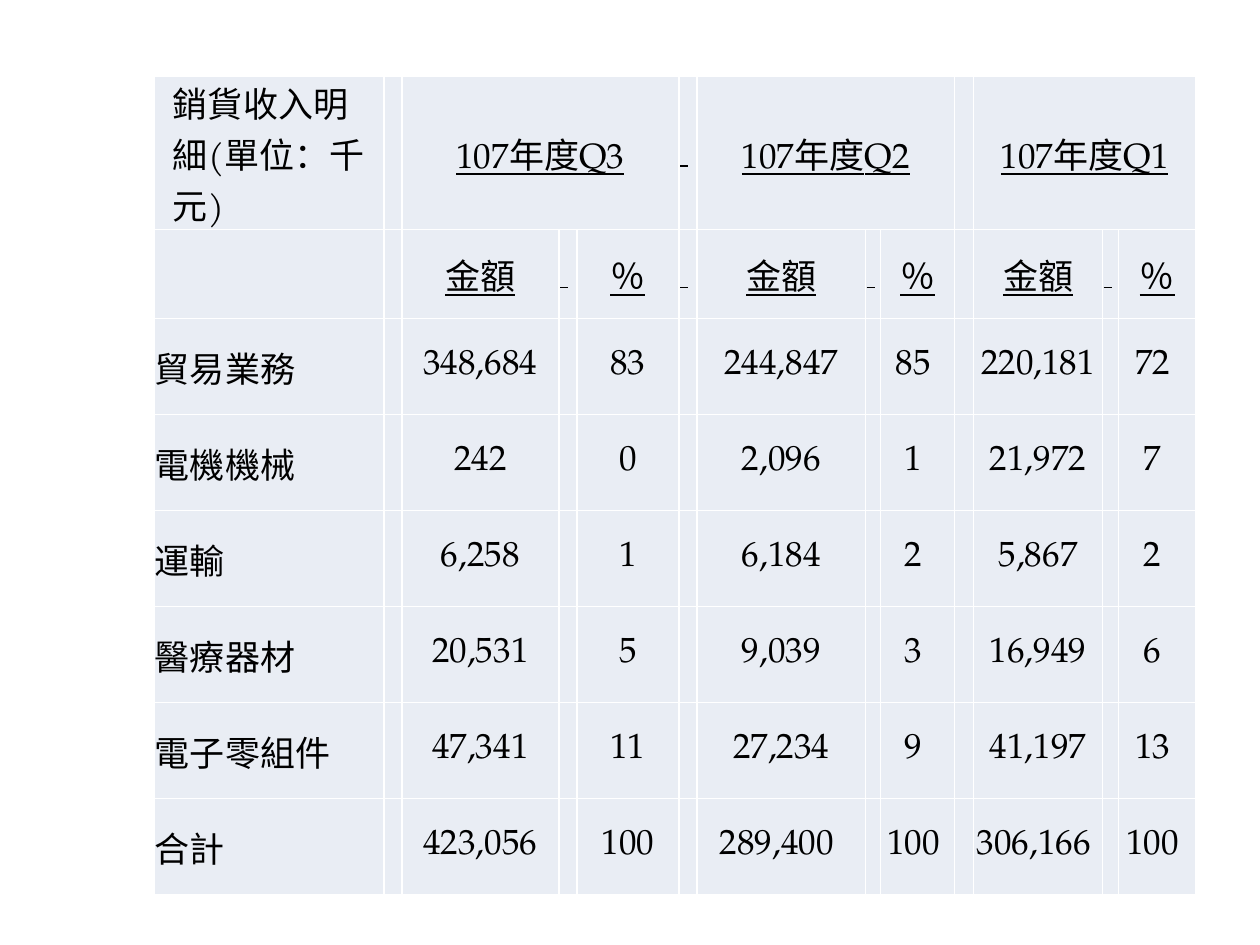
from lxml.etree import SubElement, fromstring
from pptx import Presentation
from pptx.dml.color import RGBColor
from pptx.enum.text import MSO_ANCHOR, PP_ALIGN
from pptx.oxml.ns import nsdecls, qn
from pptx.util import Emu, Pt

PIXEL = 914400 // 126
FONT = "TeX Gyre Pagella"
BLACK = RGBColor(0x00, 0x00, 0x00)
WHITE = RGBColor(0xFF, 0xFF, 0xFF)
PALE_BLUE = RGBColor(0xE9, 0xED, 0xF4)

COLUMN_WIDTHS = [230, 18, 157, 18, 102, 18, 169, 15, 74, 19, 129, 16, 77]
ROW_HEIGHTS = [100, 89] + [96] * 6
AMOUNT_COLUMNS = [2, 6, 10]
VALUE_COLUMNS = range(2, 13, 2)
QUARTERS = ["107年度Q3", "107年度Q2", "107年度Q1"]
REVENUE = [
    ("貿易業務", "348,684", "83", "244,847", "85 ", "220,181", "72 "),
    ("電機機械", "242", "0", "2,096", "1 ", "21,972", "7 "),
    ("運輸", "6,258", "1", "6,184", "2 ", "5,867", "2 "),
    ("醫療器材", "20,531", "5", "9,039", "3 ", "16,949", "6 "),
    ("電子零組件", "47,341", "11", "27,234", "9 ", "41,197", "13 "),
    ("合計", "423,056", "100", "289,400 ", "100 ", "306,166 ", "100 "),
]
# Narrow gap cells whose underline carries on from the headings
UNDERLINED_GAPS = [(0, 5), (1, 3), (1, 5), (1, 7), (1, 11)]


def px(count):
    return Emu(count * PIXEL)


def style_cell(cell):
    cell.fill.solid()
    cell.fill.fore_color.rgb = PALE_BLUE
    cell.vertical_anchor = MSO_ANCHOR.MIDDLE
    cell.margin_left = cell.margin_right = cell.margin_top = px(1)
    cell.margin_bottom = px(0)
    properties = cell._tc.get_or_add_tcPr()
    for index, side in enumerate(("lnL", "lnR", "lnT", "lnB")):
        line = fromstring(f'<a:{side} {nsdecls("a")} w="{Pt(1)}"/>')
        fill = SubElement(line, qn("a:solidFill"))
        SubElement(fill, qn("a:srgbClr")).set("val", str(WHITE))
        properties.insert(index, line)


def write_cell(cell, text, alignment=PP_ALIGN.CENTER, underline=False):
    para = cell.text_frame.paragraphs[0]
    para.alignment = alignment
    span = para.add_run()
    span.text = text
    span.font.name = FONT
    span.font.size = Pt(20)
    span.font.color.rgb = BLACK
    span.font.underline = underline


def add_revenue_table(page, left, top):
    frame = page.shapes.add_table(
        len(ROW_HEIGHTS), len(COLUMN_WIDTHS), px(left), px(top),
        px(sum(COLUMN_WIDTHS)), px(sum(ROW_HEIGHTS)))
    table = frame.table
    table.first_row = table.horz_banding = False
    for column, width in zip(table.columns, COLUMN_WIDTHS):
        column.width = px(width)
    for row, height in zip(table.rows, ROW_HEIGHTS):
        row.height = px(height)
    for cell in table.iter_cells():
        style_cell(cell)

    # Headings: one merged cell per quarter, amount and share below it
    corner = table.cell(0, 0)
    corner.margin_left = px(19)
    write_cell(corner, "銷貨收入明細(單位：千元)", PP_ALIGN.LEFT)
    for column, quarter in zip(AMOUNT_COLUMNS, QUARTERS):
        heading = table.cell(0, column)
        heading.merge(table.cell(0, column + 2))
        write_cell(heading, quarter, underline=True)
        write_cell(table.cell(1, column), "金額", underline=True)
        write_cell(table.cell(1, column + 2), "％", underline=True)
    for row, column in UNDERLINED_GAPS:
        write_cell(table.cell(row, column), " ", PP_ALIGN.LEFT, underline=True)

    # Revenue lines
    for row, (label, *values) in enumerate(REVENUE, start=2):
        write_cell(table.cell(row, 0), label, PP_ALIGN.JUSTIFY)
        for column, value in zip(VALUE_COLUMNS, values):
            write_cell(table.cell(row, column), value)


def main():
    deck = Presentation()
    deck.slide_width, deck.slide_height = px(1260), px(945)
    page = deck.slides.add_slide(deck.slide_layouts[6])
    add_revenue_table(page, left=154, top=76)
    deck.save("out.pptx")


if __name__ == "__main__":
    main()
